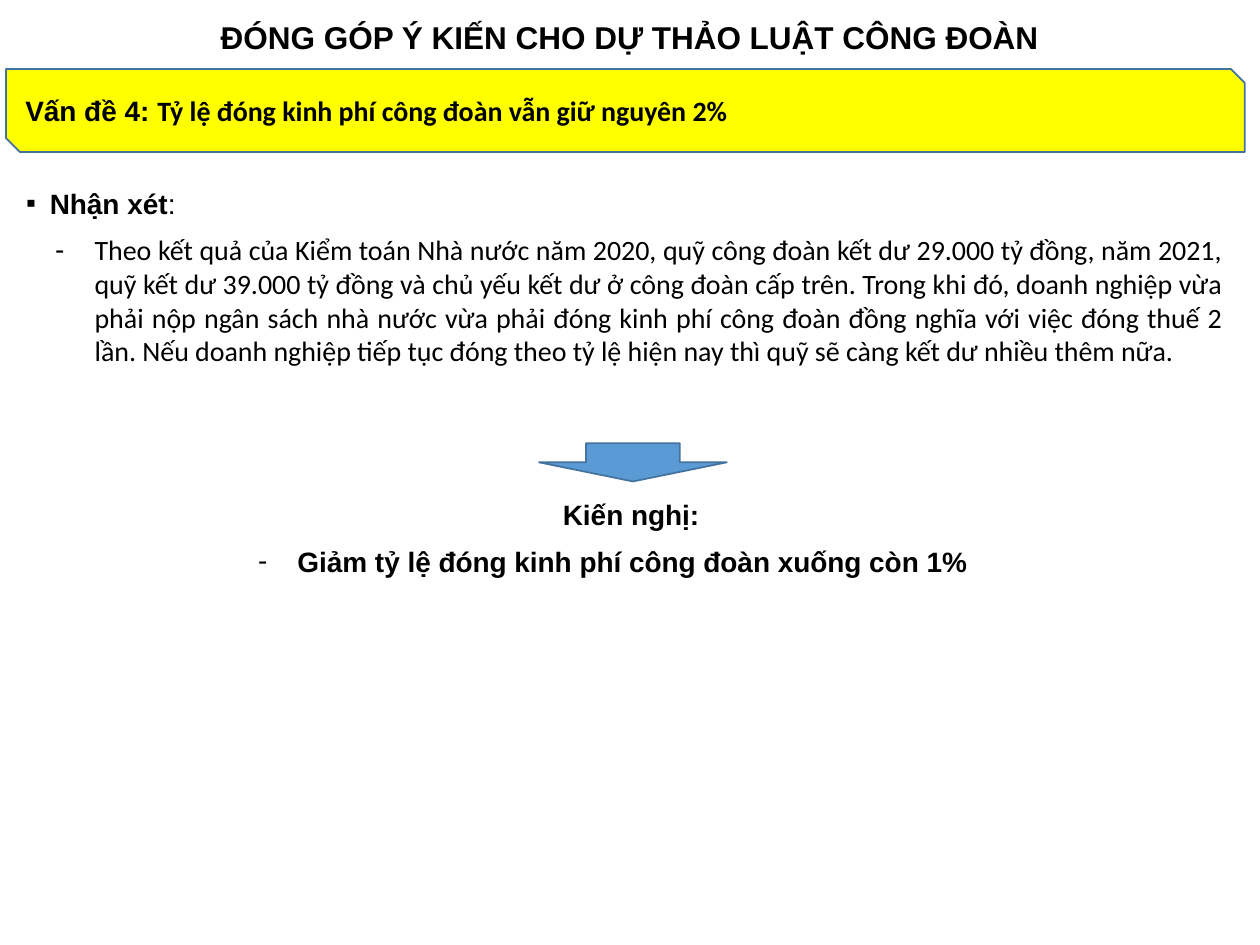
from dataclasses import dataclass

from lxml import etree
from pptx import Presentation
from pptx import util as u
from pptx.dml.color import RGBColor
from pptx.enum import shapes, text
from pptx.oxml import ns


@dataclass(frozen=True)
class Theme:
    ink: RGBColor = RGBColor(0, 0, 0)
    banner: RGBColor = RGBColor(255, 255, 0)
    arrow: RGBColor = RGBColor(0x5B, 0x9B, 0xD5)
    outline: RGBColor = RGBColor(0x43, 0x73, 0x9E)
    heading: str = "Arial"
    body: str = "Calibri"
    title_size: int = 18
    text_size: int = 16
    line_width: int = 1


THEME = Theme()


def points(box):
    return [u.Pt(value) for value in box]


def add_run(paragraph, words, font=THEME.heading, bold=True, size=THEME.text_size):
    run = paragraph.add_run()
    run.text = words
    run.font.name = font
    run.font.size = u.Pt(size)
    run.font.bold = bold
    run.font.color.rgb = THEME.ink


def add_bullet(paragraph, character, indent):
    properties = paragraph._p.get_or_add_pPr()
    properties.set("marL", str(u.Pt(indent)))
    properties.set("indent", str(-u.Pt(indent)))
    font = etree.SubElement(properties, ns.qn("a:buFont"))
    font.set("typeface", THEME.heading)
    bullet = etree.SubElement(properties, ns.qn("a:buChar"))
    bullet.set("char", character)


def add_text(slide, box, wrap=True, align=text.PP_ALIGN.LEFT):
    frame = slide.shapes.add_textbox(*points(box)).text_frame
    frame.word_wrap = wrap
    frame.auto_size = text.MSO_AUTO_SIZE.SHAPE_TO_FIT_TEXT
    paragraph = frame.paragraphs[0]
    paragraph.alignment = align
    return paragraph


def add_block(slide, kind, box, fill):
    shape = slide.shapes.add_shape(kind, *points(box))
    shape.shadow.inherit = False
    shape.fill.solid()
    shape.fill.fore_color.rgb = fill
    shape.line.color.rgb = THEME.outline
    shape.line.width = u.Pt(THEME.line_width)
    return shape


def add_header(slide):
    title = add_text(slide, (116.6, 6.5, 486.7, 29), False, text.PP_ALIGN.CENTER)
    add_run(title, "ĐÓNG GÓP Ý KIẾN CHO DỰ THẢO LUẬT CÔNG ĐOÀN", size=THEME.title_size)

    banner = add_block(slide, shapes.MSO_SHAPE.SNIP_2_DIAG_RECTANGLE,
                       (3.5, 39.5, 707.8, 47.4), THEME.banner)
    banner.text_frame.vertical_anchor = text.MSO_ANCHOR.MIDDLE
    issue = banner.text_frame.paragraphs[0]
    issue.alignment = text.PP_ALIGN.LEFT
    add_run(issue, "Vấn đề 4: ")
    add_run(issue, "Tỷ lệ đóng kinh phí công đoàn vẫn giữ nguyên 2%", THEME.body)


def add_comments(slide):
    label = add_text(slide, (7.9, 103, 698.4, 26.6))
    add_bullet(label, "▪", 13.5)
    add_run(label, "Nhận xét")
    add_run(label, ":", bold=False)

    comment = add_text(slide, (24.5, 129.6, 681.8, 123.8), align=text.PP_ALIGN.JUSTIFY)
    add_bullet(comment, "-", 22.5)
    add_run(
        comment,
        "Theo kết quả của Kiểm toán Nhà nước năm 2020, quỹ công đoàn kết dư 29.000 tỷ đồng, "
        "năm 2021, quỹ kết dư 39.000 tỷ đồng và chủ yếu kết dư ở công đoàn cấp trên. "
        "Trong khi đó, doanh nghiệp vừa phải nộp ngân sách nhà nước vừa phải đóng kinh phí "
        "công đoàn đồng nghĩa với việc đóng thuế 2 lần. Nếu doanh nghiệp tiếp tục đóng theo "
        "tỷ lệ hiện nay thì quỹ sẽ càng kết dư nhiều thêm nữa.",
        THEME.body, bold=False)


def add_proposal(slide):
    add_block(slide, shapes.MSO_SHAPE.DOWN_ARROW, (308, 253.3, 107.3, 21.8), THEME.arrow)
    label = add_text(slide, (314.6, 280.8, 93.6, 26.6), wrap=False)
    add_run(label, "Kiến nghị:")
    proposal = add_text(slide, (140.4, 307.4, 433.4, 26.6))
    add_bullet(proposal, "-", 22.5)
    add_run(proposal, "Giảm tỷ lệ đóng kinh phí công đoàn xuống còn 1%")


def main():
    presentation = Presentation()
    presentation.slide_width = u.Pt(720)
    presentation.slide_height = u.Pt(540)
    slide = presentation.slides.add_slide(presentation.slide_layouts[6])
    add_header(slide)
    add_comments(slide)
    add_proposal(slide)
    presentation.save("out.pptx")


if __name__ == "__main__":
    main()
